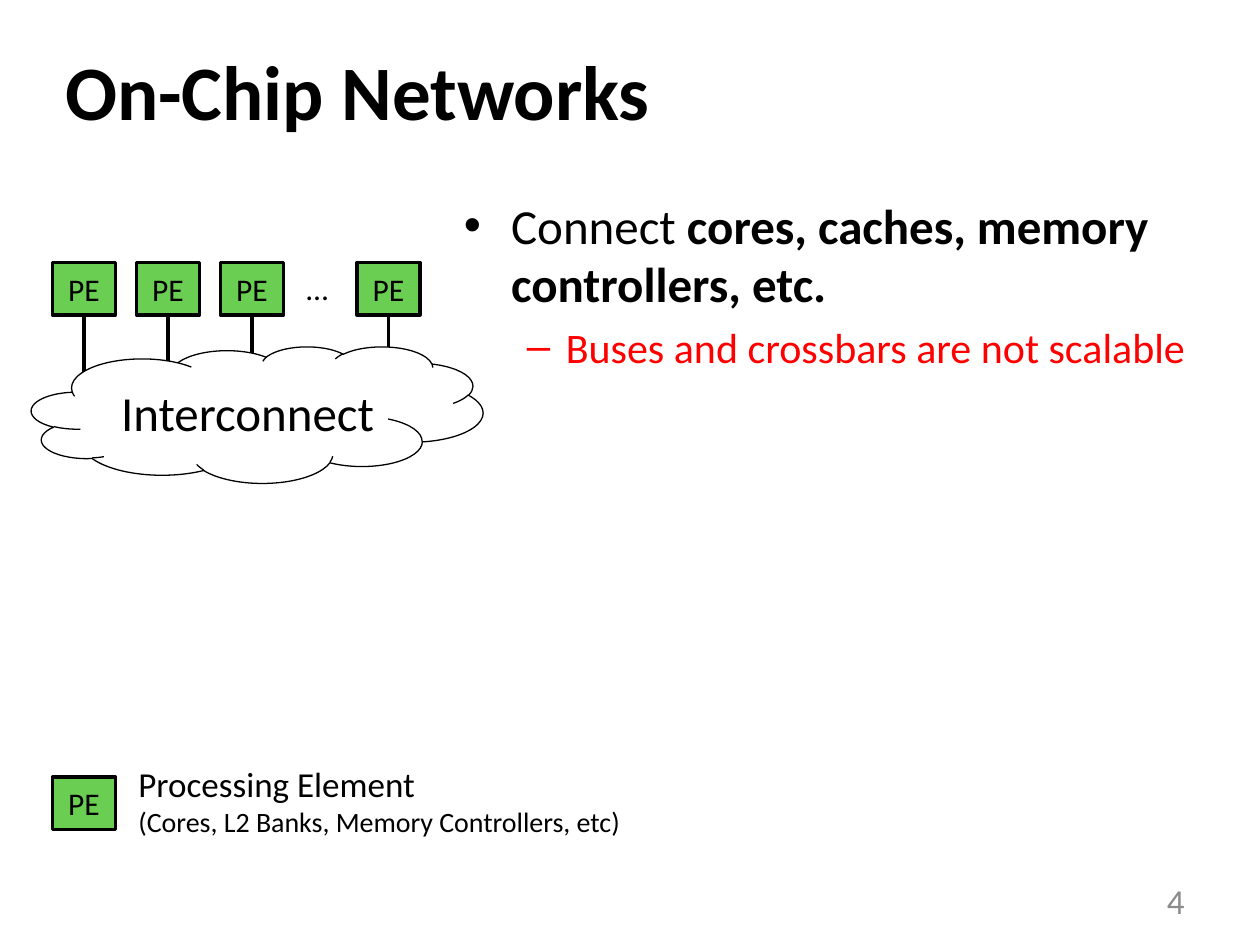
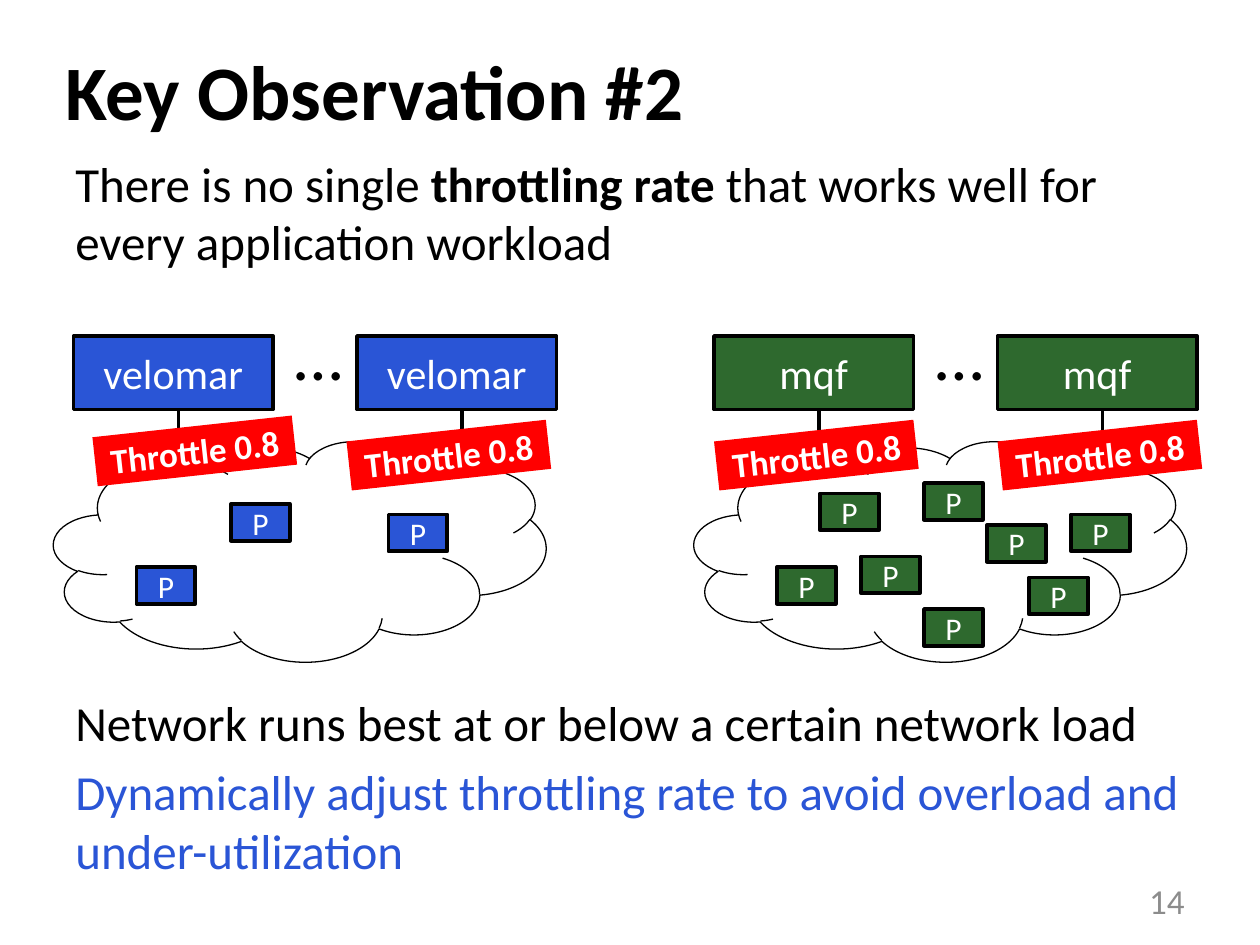
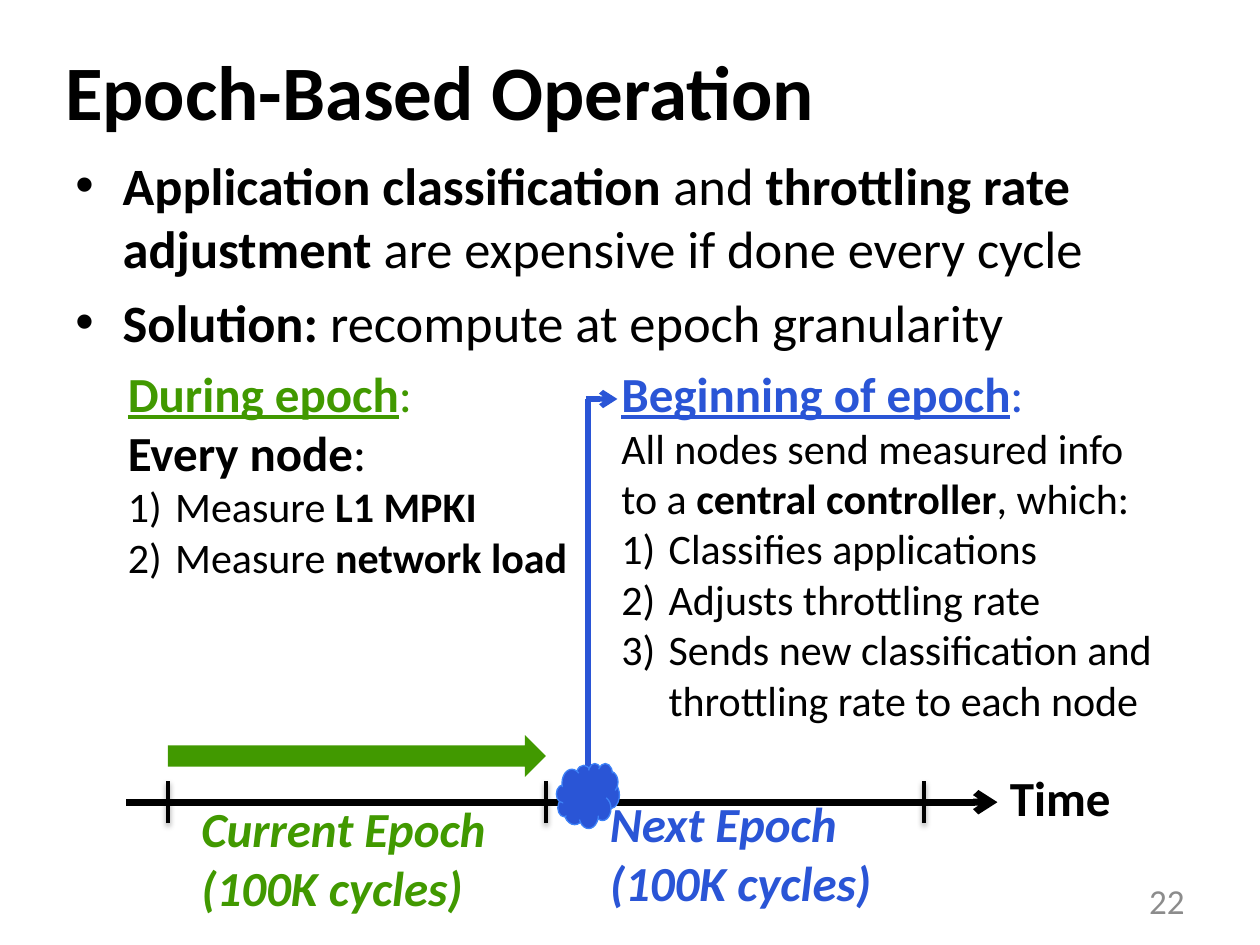
from dataclasses import dataclass

import pptx
import pptx.util
from lxml import etree
from pptx.dml.color import RGBColor
from pptx.enum.shapes import MSO_CONNECTOR, MSO_SHAPE
from pptx.enum.text import MSO_ANCHOR, MSO_AUTO_SIZE, PP_ALIGN
from pptx.oxml.ns import qn

PX = 7620  # EMU per px, 120 px to the inch
SLIDE_SIZE = (1200, 900)
TITLE_AREA = (50, 10, 1080, 150)
NUMBER_AREA = (860, 834, 280, 48)
FONT = "Calibri"
TITLE_ONLY = 5

BLACK = RGBColor(0, 0, 0)
WHITE = RGBColor(255, 255, 255)
GRAY = RGBColor(0x8C, 0x8C, 0x8C)
RED = RGBColor(255, 0, 0)
BLUE = RGBColor(0x2A, 0x55, 0xD6)
LIGHT_BLUE = RGBColor(0x3E, 0x82, 0xF7)
GREEN = RGBColor(0x41, 0x99, 0)
DARK_GREEN = RGBColor(0x2E, 0x69, 0x2E)
PE_GREEN = RGBColor(0x6A, 0xCE, 0x52)


@dataclass
class Run:
    """Text with a style made of the letters b (bold), i (italic), u (underlined)."""
    text: str
    size: int = 28
    color: RGBColor = BLACK
    style: str = ""


@dataclass
class Paragraph:
    """A bullet is a key of BULLETS; a spaced paragraph has a gap above it."""
    runs: list
    bullet: str = ""
    spaced: bool = False


# Bullet: left margin, indent, element, attributes
BULLETS = {
    "dot": (45, -45, "a:buChar", {"char": "•"}),
    "dash": (97, -37, "a:buChar", {"char": "–"}),
    "number": (45, -45, "a:buAutoNum", {"type": "arabicParenR"}),
}

# On-Chip Networks
NETWORK_POINTS = [
    Paragraph([Run("Connect "), Run("cores, caches, memory controllers, etc.", style="b")],
              "dot", True),
    Paragraph([Run("Buses and crossbars are not scalable", 24, RED)], "dash", True),
]
PE_SIZE = (60, 50)
PE_LEFTS = (50, 130, 210, 340)
PE_TOP = 250
PE_LINK_BOTTOM = 360
LEGEND = [
    Paragraph([Run("Processing Element", 20)]),
    Paragraph([Run("(Cores, L2 Banks, Memory Controllers, etc)", 16)]),
]

# Key Observation #2
OBSERVATION = [
    Paragraph([Run("There is no single "), Run("throttling rate", style="b"),
               Run(" that works well for every application workload")], spaced=True),
]
CONCLUSION = [
    Paragraph([Run("Network runs best at or below a certain network load")], spaced=True),
    Paragraph([Run("Dynamically adjust throttling rate to avoid overload and "
                   "under-utilization", color=BLUE)], spaced=True),
]
APPLICATION_PITCH = 270
# Name, colour, left edge, packet corners, throttle tag corners
WORKLOADS = [
    ("velomar", BLUE, 70,
     [(220, 480), (370, 490), (130, 540)],
     [(90, 406), (332, 410)]),
    ("mqf", DARK_GREEN, 680,
     [(940, 500), (781, 470), (820, 530), (880, 580),
      (740, 540), (980, 550), (1020, 490), (880, 460)],
     [(682, 410), (952, 410)]),
]

# Epoch-Based Operation
EPOCH_POINTS = [
    Paragraph([Run("Application classification ", 30, style="b"), Run("and", 30),
               Run(" throttling rate adjustment", 30, style="b"),
               Run(" are expensive if done every cycle", 30)], "dot", True),
    Paragraph([Run("Solution: ", 30, style="b"),
               Run("recompute at epoch granularity", 30)], "dot", True),
]
DURING_EPOCH = [
    Paragraph([Run("During epoch", color=GREEN, style="bu"), Run(":", color=GREEN)]),
    Paragraph([Run("Every node", style="b"), Run(":")]),
    Paragraph([Run("Measure ", 24), Run("L1 MPKI", 24, style="b")], "number"),
    Paragraph([Run("Measure ", 24), Run("network load", 24, style="b")], "number"),
]
CONTROLLER_STEPS = [
    "Classifies applications",
    "Adjusts throttling rate",
    "Sends new classification and throttling rate to each node",
]
BEGINNING_OF_EPOCH = [
    Paragraph([Run("Beginning of epoch", color=BLUE, style="bu"), Run(":", color=BLUE)]),
    Paragraph([Run("All nodes send measured info to a ", 24),
               Run("central controller", 24, style="b"), Run(", which:", 24)]),
    *(Paragraph([Run(step, 24)], "number") for step in CONTROLLER_STEPS),
]
EPOCH_LABELS = [
    ("Current Epoch", GREEN, (180, 755, 310, 125)),
    ("Next Epoch", BLUE, (569, 750, 288, 125)),
]
EPOCH_LENGTH = "(100K cycles)"
TIMELINE_Y = 764
EPOCH_TICKS = range(160, 881, 360)


def emu(*lengths):
    return [pptx.util.Emu(length * PX) for length in lengths]


def set_bullet(paragraph, bullet):
    margin, indent, tag, attributes = BULLETS[bullet]
    properties = paragraph._p.get_or_add_pPr()
    properties.set("marL", str(margin * PX))
    properties.set("indent", str(indent * PX))
    etree.SubElement(properties, qn("a:buFont"), typeface=FONT if tag == "a:buAutoNum" else "Arial")
    etree.SubElement(properties, qn(tag), attributes)


def fill_text(frame, paragraphs, align=PP_ALIGN.LEFT, anchor=MSO_ANCHOR.TOP):
    frame.vertical_anchor = anchor
    for index, content in enumerate(paragraphs):
        paragraph = frame.add_paragraph() if index else frame.paragraphs[0]
        paragraph.alignment = align
        if content.bullet:
            set_bullet(paragraph, content.bullet)
        if content.spaced:
            paragraph.space_before = pptx.util.Pt(content.runs[0].size * 0.2)
        for part in content.runs:
            run = paragraph.add_run()
            run.text = part.text
            run.font.name = FONT
            run.font.size = pptx.util.Pt(part.size)
            run.font.color.rgb = part.color
            run.font.bold = "b" in part.style
            run.font.italic = "i" in part.style
            run.font.underline = "u" in part.style


def add_text(slide, area, paragraphs, wrap=True, **layout):
    frame = slide.shapes.add_textbox(*emu(*area)).text_frame
    frame.word_wrap = wrap
    frame.auto_size = MSO_AUTO_SIZE.NONE if wrap else MSO_AUTO_SIZE.SHAPE_TO_FIT_TEXT
    fill_text(frame, paragraphs, **layout)


def add_shape(slide, kind, area, fill, run=None, line=BLACK, width=2):
    shape = slide.shapes.add_shape(kind, *emu(*area))
    shape.shadow.inherit = False
    shape.fill.solid()
    shape.fill.fore_color.rgb = fill
    if line is None:
        shape.line.fill.background()
    else:
        shape.line.color.rgb = line
        shape.line.width = pptx.util.Pt(width)
    if run:
        fill_text(shape.text_frame, [Paragraph([run])], PP_ALIGN.CENTER, MSO_ANCHOR.MIDDLE)
    return shape


def add_line(slide, start, end, color=BLACK, width=2, arrow=False, shadow=False):
    line = slide.shapes.add_connector(MSO_CONNECTOR.STRAIGHT, *emu(*start, *end))
    line.line.color.rgb = color
    line.line.width = pptx.util.Pt(width)
    if arrow:
        etree.SubElement(line.line._get_or_add_ln(), qn("a:tailEnd"), type="arrow")
    effects = etree.SubElement(line._element.spPr, qn("a:effectLst"))
    if shadow:
        outer = etree.SubElement(effects, qn("a:outerShdw"), blurRad="40000",
                                 dist="20000", dir="5400000", rotWithShape="0")
        shade = etree.SubElement(outer, qn("a:srgbClr"), val=str(BLACK))
        etree.SubElement(shade, qn("a:alpha"), val="38000")
    return line


def add_slide(presentation, title, number):
    slide = presentation.slides.add_slide(presentation.slide_layouts[TITLE_ONLY])
    holder = slide.shapes.title
    holder.left, holder.top, holder.width, holder.height = emu(*TITLE_AREA)
    holder.text_frame.auto_size = MSO_AUTO_SIZE.NONE
    fill_text(holder.text_frame, [Paragraph([Run(title, 44, style="b")])],
              anchor=MSO_ANCHOR.MIDDLE)
    add_text(slide, NUMBER_AREA, [Paragraph([Run(str(number), 20, GRAY)])],
             align=PP_ALIGN.RIGHT, anchor=MSO_ANCHOR.MIDDLE)
    return slide


def add_processing_element(slide, left, top):
    return add_shape(slide, MSO_SHAPE.RECTANGLE, (left, top, *PE_SIZE), PE_GREEN, Run("PE", 18))


def build_networks(presentation):
    slide = add_slide(presentation, "On-Chip Networks", 4)
    add_text(slide, (430, 180, 750, 530), NETWORK_POINTS)
    for left in PE_LEFTS:
        element = add_processing_element(slide, left, PE_TOP)
        center = left + PE_SIZE[0] // 2
        link = add_line(slide, (center, PE_TOP + PE_SIZE[1]), (center, PE_LINK_BOTTOM))
        link.begin_connect(element, 2)
    add_text(slide, (280, PE_TOP, 46, 48), [Paragraph([Run("…", 18)])], wrap=False)
    cloud = add_shape(slide, MSO_SHAPE.CLOUD, (30, 330, 430, 130), WHITE,
                      Run("Interconnect"), width=0.75)
    cloud.text_frame.margin_left = emu(24)[0]
    add_processing_element(slide, 50, 740)
    add_text(slide, (120, 720, 488, 85), LEGEND, wrap=False)


def add_workload(slide, name, color, left, packets, tags):
    for application_left in (left, left + APPLICATION_PITCH):
        add_shape(slide, MSO_SHAPE.RECTANGLE, (application_left, 320, 190, 70), color,
                  Run(name, 24, WHITE))
        link_x = application_left + 100
        add_line(slide, (link_x, 390), (link_x, 490))
    add_text(slide, (left + 199, 290, 71, 92), [Paragraph([Run("…", 40)])], wrap=False)
    add_shape(slide, MSO_SHAPE.CLOUD, (left - 19, 420, 469, 210), WHITE, width=0.75)
    for corner in packets:
        add_shape(slide, MSO_SHAPE.RECTANGLE, (*corner, 56, 35), color,
                  Run("P", 18, WHITE), width=2.25)
    for corner in tags:
        tag = add_shape(slide, MSO_SHAPE.RECTANGLE, (*corner, 191, 47), RED,
                        Run("Throttle 0.8", 20, WHITE, "b"), line=None)
        tag.rotation = -6.2


def build_observation(presentation):
    slide = add_slide(presentation, "Key Observation #2", 14)
    add_text(slide, (60, 140, 1080, 130), OBSERVATION)
    add_text(slide, (60, 654, 1080, 176), CONCLUSION)
    for workload in WORKLOADS:
        add_workload(slide, *workload)


def build_epochs(presentation):
    slide = add_slide(presentation, "Epoch-Based Operation", 22)
    add_text(slide, (60, 140, 1080, 690), EPOCH_POINTS)
    add_line(slide, (120, TIMELINE_Y), (950, TIMELINE_Y), width=4, arrow=True)
    for x in EPOCH_TICKS:
        add_line(slide, (x, TIMELINE_Y + 20), (x, TIMELINE_Y - 20), shadow=True)
    add_text(slide, (950, 725, 121, 68), [Paragraph([Run("Time", style="b")])], wrap=False)
    for label, color, area in EPOCH_LABELS:
        lines = [Paragraph([Run(text, color=color, style="bi")]) for text in (label, EPOCH_LENGTH)]
        add_text(slide, area, lines, wrap=False)
    add_text(slide, (110, 340, 500, 222), DURING_EPOCH)
    add_line(slide, (558, 380), (588, 380), BLUE, 3, arrow=True)
    add_line(slide, (560, 755), (560, 380), BLUE, 3)
    add_shape(slide, MSO_SHAPE.CLOUD, (530, 727, 60, 62), BLUE, line=LIGHT_BLUE, width=0.75)
    add_text(slide, (580, 340, 530, 360), BEGINNING_OF_EPOCH)
    add_shape(slide, MSO_SHAPE.RIGHT_ARROW, (160, 700, 360, 40), GREEN, line=None)


def main():
    presentation = pptx.Presentation()
    presentation.slide_width, presentation.slide_height = emu(*SLIDE_SIZE)
    build_networks(presentation)
    build_observation(presentation)
    build_epochs(presentation)
    presentation.save("out.pptx")


if __name__ == "__main__":
    main()
